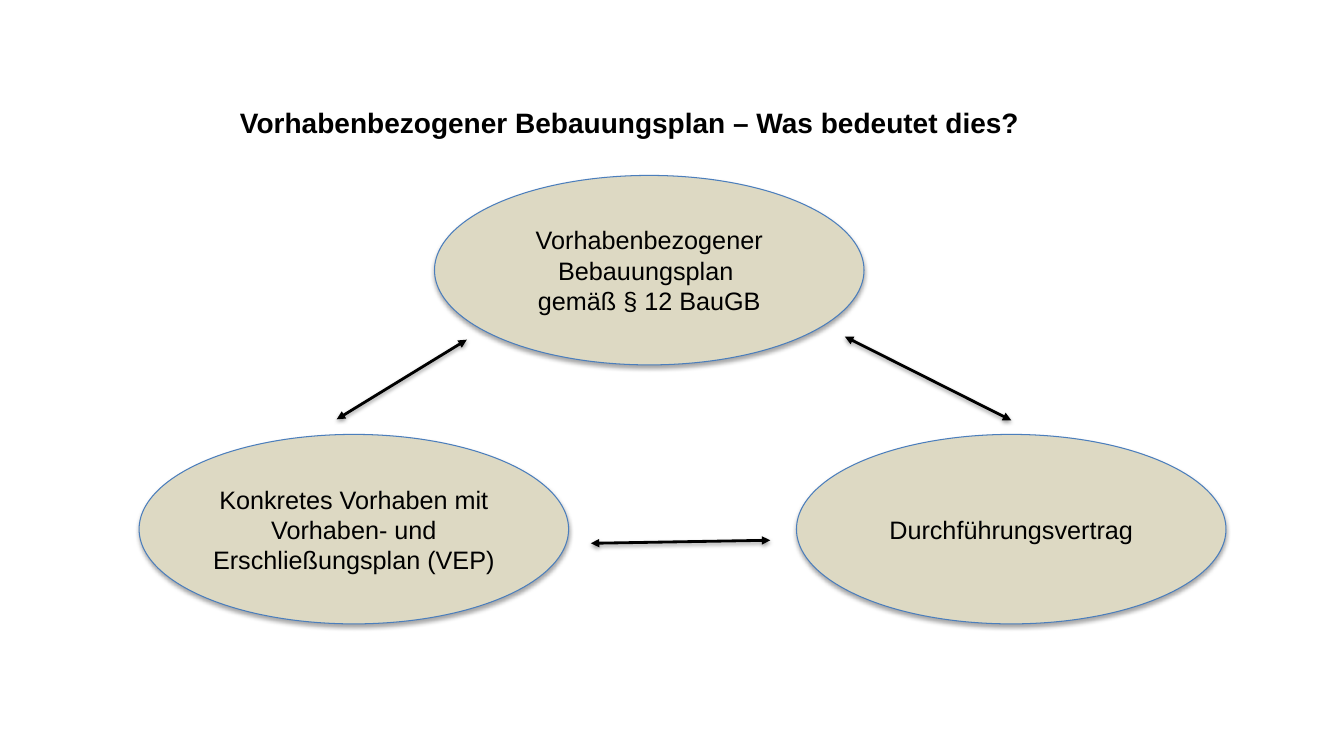
from lxml.etree import SubElement
from pptx import Presentation
from pptx.dml.color import RGBColor
from pptx.enum.shapes import MSO_CONNECTOR, MSO_SHAPE
from pptx.enum.text import MSO_ANCHOR, MSO_AUTO_SIZE, PP_ALIGN
from pptx.oxml.ns import qn
from pptx.util import Inches, Pt

COLORS = {"text": "000000", "oval": "DDD9C3", "outline": "4B7EBC",
          "arrow": "000000", "shadow": "000000"}
FONT = "Arial"
OVAL_SIZE = (4.26, 1.88)
LOWER_TOP = 4.31
OVALS = [
    (1.38, LOWER_TOP, "Konkretes Vorhaben mit Vorhaben- und Erschließungsplan (VEP)"),
    (4.31, 1.74, "Vorhabenbezogener Bebauungsplan \ngemäß § 12 BauGB"),
    (7.9, LOWER_TOP, "Durchführungsvertrag"),
]
ARROWS = [
    ((4.63, 3.37), (3.34, 4.16)),
    ((8.38, 3.34), (10.03, 4.17)),
    ((5.86, 5.39), (7.64, 5.36)),
]


def rgb(name):
    return RGBColor.from_string(COLORS[name])


def style_text(frame, size, align, bold=False):
    for paragraph in frame.paragraphs:
        paragraph.alignment = align
        for run in paragraph.runs:
            run.font.name = FONT
            run.font.size = Pt(size)
            run.font.bold = bold
            run.font.color.rgb = rgb("text")


def add_shadow(effects, distance, opacity):
    """Put a soft shadow that falls straight down into an effect list."""
    shadow = SubElement(effects, qn("a:outerShdw"), blurRad=str(Pt(3.1)),
                        dist=str(Pt(distance)), dir="5400000", rotWithShape="0")
    color = SubElement(shadow, qn("a:srgbClr"), val=COLORS["shadow"])
    SubElement(color, qn("a:alpha"), val=str(opacity * 1000))


def place_title(slide, left, top, width, height):
    title = slide.shapes.title
    title.left, title.top = Inches(left), Inches(top)
    title.width, title.height = Inches(width), Inches(height)
    frame = title.text_frame
    frame.text = "Vorhabenbezogener Bebauungsplan – Was bedeutet dies?"
    frame.word_wrap = True
    frame.auto_size = MSO_AUTO_SIZE.NONE
    frame.vertical_anchor = MSO_ANCHOR.TOP
    style_text(frame, 20, PP_ALIGN.LEFT, bold=True)


def add_oval(slide, left, top, width, height, label):
    oval = slide.shapes.add_shape(MSO_SHAPE.OVAL, Inches(left), Inches(top),
                                  Inches(width), Inches(height))
    oval.fill.solid()
    oval.fill.fore_color.rgb = rgb("oval")
    oval.line.color.rgb = rgb("outline")
    oval.line.width = Pt(0.75)
    oval.shadow.inherit = False
    add_shadow(oval.element.spPr.find(qn("a:effectLst")), 1.8, 35)
    frame = oval.text_frame
    frame.text = label
    frame.word_wrap = True
    frame.vertical_anchor = MSO_ANCHOR.MIDDLE
    style_text(frame, 18, PP_ALIGN.CENTER)


def add_double_arrow(slide, start, end):
    arrow = slide.shapes.add_connector(
        MSO_CONNECTOR.STRAIGHT, *(Inches(value) for value in start + end))
    arrow.line.color.rgb = rgb("arrow")
    arrow.line.width = Pt(2)
    properties = arrow.element.spPr
    for tip in ("a:headEnd", "a:tailEnd"):
        SubElement(properties.find(qn("a:ln")), qn(tip), type="triangle")
    add_shadow(SubElement(properties, qn("a:effectLst")), 1.6, 38)


def add_triangle_diagram(slide):
    for left, top, label in OVALS:
        add_oval(slide, left, top, *OVAL_SIZE, label)
    for start, end in ARROWS:
        add_double_arrow(slide, start, end)


def main():
    deck = Presentation()
    deck.slide_width, deck.slide_height = Inches(13.33), Inches(7.5)
    slide = deck.slides.add_slide(deck.slide_layouts[5])
    place_title(slide, 2.28, 1, 9, 0.44)
    add_triangle_diagram(slide)
    deck.save("out.pptx")


if __name__ == "__main__":
    main()
